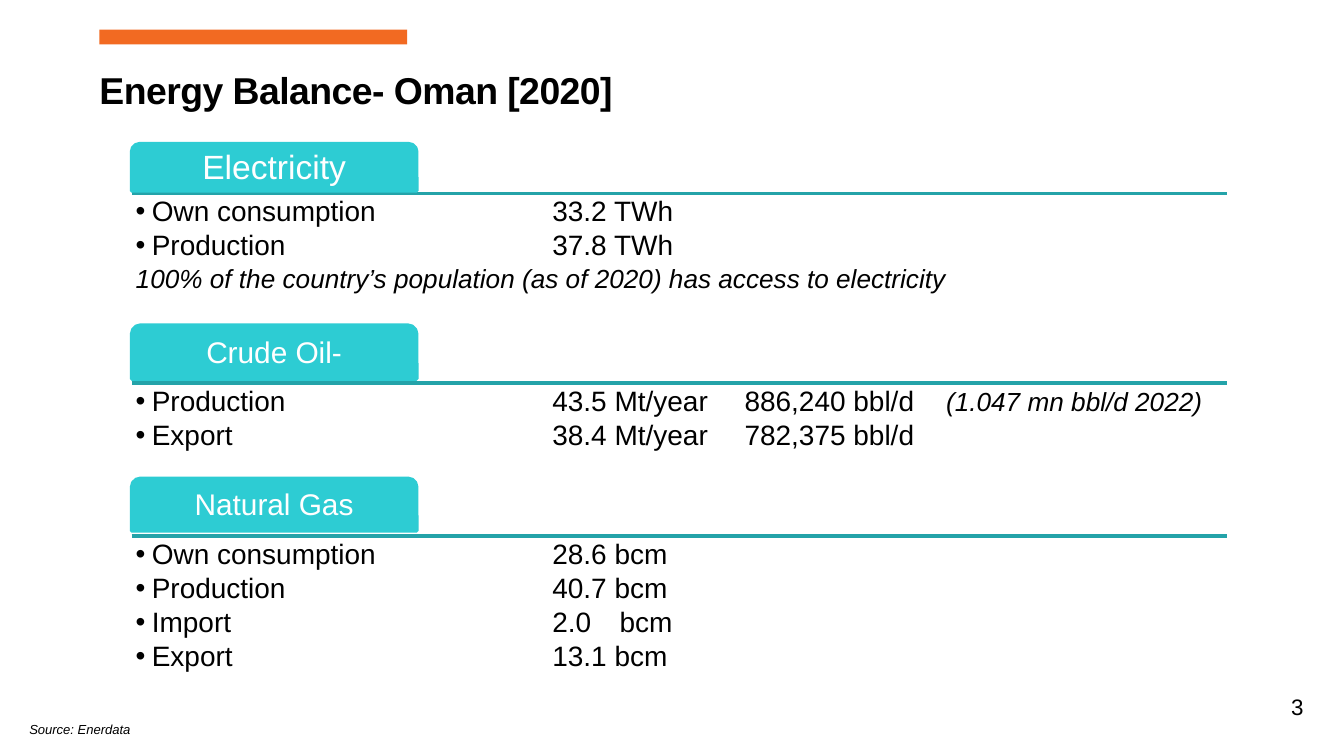
from dataclasses import dataclass

from lxml.etree import SubElement
from pptx import Presentation
from pptx.dml.color import RGBColor
from pptx.enum.shapes import MSO_CONNECTOR, MSO_SHAPE
from pptx.enum.text import MSO_ANCHOR, MSO_AUTO_SIZE, PP_ALIGN
from pptx.oxml.ns import qn
from pptx.util import Inches, Pt


@dataclass(frozen=True)
class Theme:
    """Colours, font and type sizes of the slide."""

    font: str = "Arial"
    ink: RGBColor = RGBColor(0x00, 0x00, 0x00)
    white: RGBColor = RGBColor(0xFF, 0xFF, 0xFF)
    accent: RGBColor = RGBColor(0xF2, 0x6A, 0x22)
    tab: RGBColor = RGBColor(0x2D, 0xCC, 0xD3)
    rule: RGBColor = RGBColor(0x24, 0xA3, 0xA9)
    title: float = 20
    heading: float = 16
    lead_heading: float = 18
    body: float = 15
    note: float = 14
    number: float = 12
    source: float = 7


THEME = Theme()
LEFT, WIDTH, TAB_WIDTH = 0.98, 8.15, 2.12
INDENT = 0.12
COLUMNS = (3.1, 3.6, 4.53, 6.03)

SECTIONS = (
    ("Electricity", THEME.lead_heading, 1.07, 0.35, 1.44, 0.71, (
        ("Own consumption\t33.2 TWh", ""),
        ("Production\t37.8 TWh", ""),
        ("", "100% of the country’s population (as of 2020) has access to electricity"),
    )),
    ("Crude Oil-", THEME.heading, 2.42, 0.4, 2.85, 0.44, (
        ("Production\t43.5 Mt/year\t886,240 bbl/d\t", "(1.047 mn bbl/d 2022)"),
        ("Export\t38.4 Mt/year\t782,375 bbl/d", ""),
    )),
    ("Natural Gas", THEME.heading, 3.56, 0.39, 3.99, 1.33, (
        ("Own consumption\t28.6 bcm", ""),
        ("Production\t40.7 bcm", ""),
        ("Import\t2.0\tbcm", ""),
        ("Export\t13.1 bcm", ""),
    )),
)


def add_span(para, text, size, color=THEME.ink, bold=False, italic=False):
    """Add one formatted run and return it."""
    span = para.add_run()
    span.text = text
    font = span.font
    font.name, font.size, font.bold, font.italic = THEME.font, Pt(size), bold, italic
    font.color.rgb = color
    return span


def set_margins(frame, inset):
    """Give a text frame the same inset on every side."""
    frame.margin_left = frame.margin_right = Inches(inset)
    frame.margin_top = frame.margin_bottom = Inches(inset)


def add_text_box(page, left, top, width, height, inset, wrap=True):
    """Add an empty text box and return its frame."""
    box = page.shapes.add_textbox(Inches(left), Inches(top), Inches(width), Inches(height))
    frame = box.text_frame
    frame.word_wrap = wrap
    set_margins(frame, inset)
    return frame


def add_block(page, kind, left, top, width, height, color):
    """Add a plain filled shape."""
    block = page.shapes.add_shape(kind, Inches(left), Inches(top), Inches(width), Inches(height))
    block.shadow.inherit = False
    block.fill.solid()
    block.fill.fore_color.rgb = color
    block.line.fill.background()
    return block


def add_title(page, text):
    """Place and format the title placeholder."""
    title = page.shapes.title
    title.left, title.top = Inches(0.64), Inches(0.45)
    title.width, title.height = Inches(5), Inches(0.44)
    frame = title.text_frame
    frame.auto_size = MSO_AUTO_SIZE.NONE
    frame.vertical_anchor = MSO_ANCHOR.TOP
    para = frame.paragraphs[0]
    para.alignment = PP_ALIGN.LEFT
    span = add_span(para, text, THEME.title, bold=True)
    span.font._element.set("spc", "-30")


def add_rule(page, top):
    """Add the horizontal line under a section tab."""
    rule = page.shapes.add_connector(
        MSO_CONNECTOR.STRAIGHT, Inches(LEFT), Inches(top), Inches(LEFT + WIDTH), Inches(top))
    rule.line.color.rgb = THEME.rule
    rule.line.width = Pt(2)
    SubElement(rule._element.spPr, qn("a:effectLst"))


def add_tab(page, text, size, top, height):
    """Add a section heading with rounded top corners."""
    tab = add_block(page, MSO_SHAPE.ROUND_2_SAME_RECTANGLE, LEFT, top, TAB_WIDTH, height, THEME.tab)
    tab.line.color.rgb = THEME.tab
    tab.line.width = Pt(2)
    frame = tab.text_frame
    set_margins(frame, 0.03)
    frame.vertical_anchor = MSO_ANCHOR.MIDDLE
    para = frame.paragraphs[0]
    para.alignment = PP_ALIGN.CENTER
    para.line_spacing = 0.9
    add_span(para, text, size, THEME.white)


def format_row(para, bulleted):
    """Set hanging indent, bullet, column tabs and spacing of a row."""
    para.line_spacing = 0.9
    para.space_after = Pt(2.1)
    props = para._p.get_or_add_pPr()
    hang = Inches(INDENT)
    props.set("marL", str(hang))
    props.set("indent", str(-hang))
    if bulleted:
        SubElement(props, qn("a:buFont"), typeface=THEME.font)
        SubElement(props, qn("a:buChar"), char="•")
    else:
        SubElement(props, qn("a:buNone"))
    tabs = SubElement(props, qn("a:tabLst"))
    for column in COLUMNS:
        SubElement(tabs, qn("a:tab"), pos=str(Inches(column)), algn="l")


def add_rows(page, top, height, rows):
    """Add the figures of one section."""
    frame = add_text_box(page, LEFT, top, WIDTH, height, 0.03)
    for index, (figures, note) in enumerate(rows):
        para = frame.add_paragraph() if index else frame.paragraphs[0]
        format_row(para, bool(figures))
        if figures:
            add_span(para, figures, THEME.body)
        if note:
            add_span(para, note, THEME.note, italic=True)


def main():
    """Build the slide and save the deck."""
    deck = Presentation()
    deck.slide_width = Inches(10)
    deck.slide_height = deck.slide_width * 9 // 16
    page = deck.slides.add_slide(deck.slide_layouts[5])
    add_block(page, MSO_SHAPE.RECTANGLE, 0.74, 0.22, 2.29, 0.11, THEME.accent)
    add_title(page, "Energy Balance- Oman [2020]")
    for name, size, tab_top, tab_height, top, height, rows in SECTIONS:
        add_rule(page, top)
        add_tab(page, name, size, tab_top, tab_height)
        add_rows(page, top, height, rows)
    number = add_text_box(page, 8.26, 5.16, 1.44, 0.2, 0).paragraphs[0]
    number.alignment = PP_ALIGN.RIGHT
    add_span(number, "3", THEME.number)
    source = add_text_box(page, 0.12, 5.32, 0.97, 0.22, 0.1, wrap=False)
    source.margin_top = source.margin_bottom = Inches(0.05)
    add_span(source.paragraphs[0], "Source: Enerdata", THEME.source, italic=True)
    deck.save("out.pptx")


if __name__ == "__main__":
    main()
